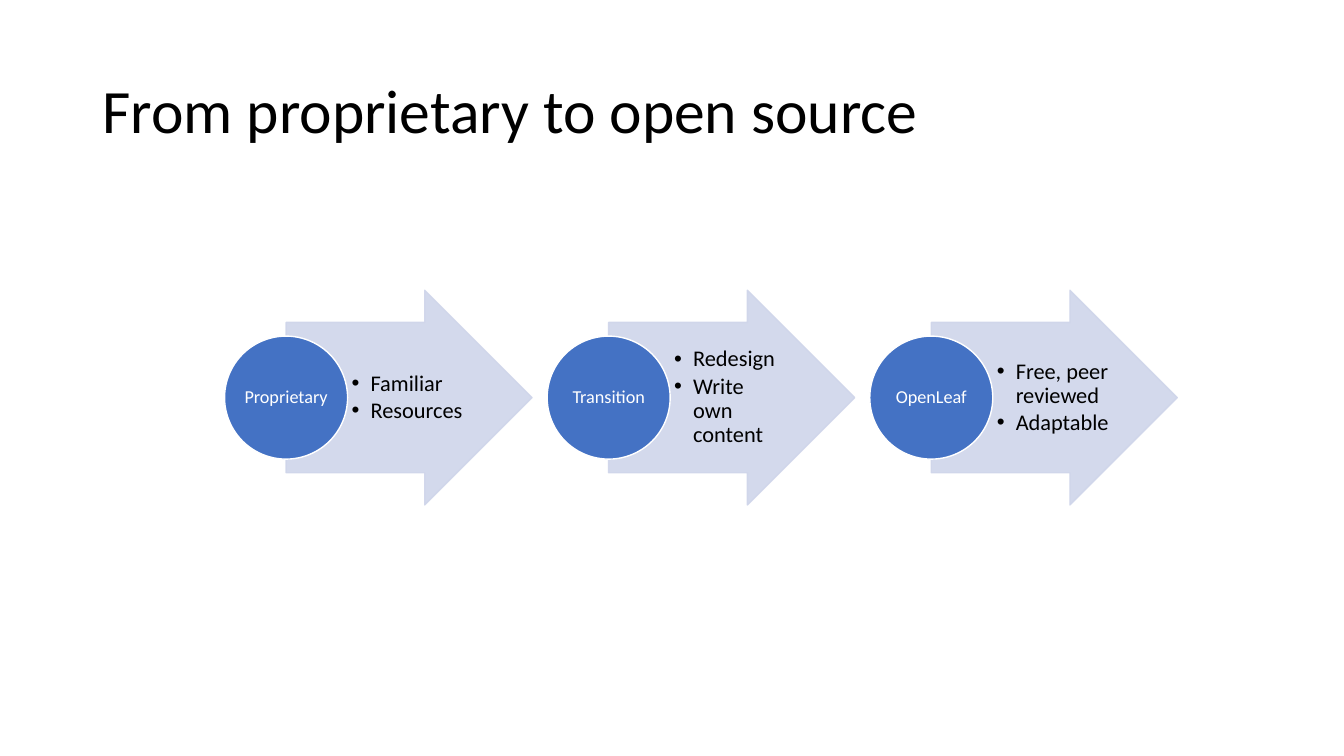
"""Build a slide with three arrow steps from proprietary to open source."""
from lxml.etree import SubElement
from pptx import Presentation
from pptx.dml.color import RGBColor
from pptx.enum.shapes import MSO_SHAPE
from pptx.enum.text import MSO_ANCHOR, MSO_AUTO_SIZE, PP_ALIGN
from pptx.oxml.ns import qn
from pptx.util import Cm, Pt

TITLE = "From proprietary to open source"
STEPS = [
    ("Proprietary", ["Familiar", "Resources"]),
    ("Transition", ["Redesign", "Write own content"]),
    ("OpenLeaf", ["Free, peer reviewed", "Adaptable"]),
]
COLORS = {"ink": "000000", "arrow": "CFD5EA", "disc": "4472C4", "white": "FFFFFF"}
FONT = "Calibri"

LEFT, MID, STEP = 7.21, 10.02, 8.13
WIDE, HIGH, SHAFT = 6.2, 5.41, 0.7
DISC, LABEL = 3.1, 2.18
LIST = 3.02
INDENT = 0.48


def color(name):
    return RGBColor.from_string(COLORS[name])


def write(shape, lines, size, ink="ink", align=PP_ALIGN.LEFT, inset=None,
          after=0, bullet=False):
    frame = shape.text_frame
    frame.word_wrap = True
    frame.auto_size = MSO_AUTO_SIZE.NONE
    frame.vertical_anchor = MSO_ANCHOR.MIDDLE
    if inset:
        (frame.margin_left, frame.margin_top,
         frame.margin_right, frame.margin_bottom) = map(Cm, inset)
    frame.text = "\n".join(lines)
    for para in frame.paragraphs:
        para.alignment = align
        para.line_spacing = 0.9
        para.space_after = Pt(after)
        font = para.runs[0].font
        font.name, font.size = FONT, Pt(size)
        font.color.rgb = color(ink)
        if bullet:
            props = para._p.get_or_add_pPr()
            props.set("marL", str(Cm(INDENT)))
            props.set("indent", str(-Cm(INDENT)))
            SubElement(props, qn("a:buFont"), typeface="Arial")
            SubElement(props, qn("a:buChar"), char="•")


def draw(slide, kind, x, y, w, h, fill, line, alpha=None):
    shape = slide.shapes.add_shape(kind, Cm(x), Cm(y), Cm(w), Cm(h))
    shape.shadow.inherit = False
    shape.fill.solid()
    shape.fill.fore_color.rgb = color(fill)
    shape.line.color.rgb = color(line)
    shape.line.width = Pt(1)
    if alpha:
        for tint in shape._element.spPr.iter(qn("a:srgbClr")):
            SubElement(tint, qn("a:alpha"), val=str(alpha * 1000))
    return shape


def box(slide, x, y, w, h):
    return slide.shapes.add_textbox(Cm(x), Cm(y), Cm(w), Cm(h))


def main():
    deck = Presentation()
    deck.slide_width, deck.slide_height = Cm(33.87), Cm(19.05)
    slide = deck.slides.add_slide(deck.slide_layouts[5])

    title = slide.shapes.title
    title.left, title.top = Cm(2.33), Cm(1.02)
    title.width, title.height = Cm(29.21), Cm(3.68)
    write(title, [TITLE], 44)

    for i, (name, points) in enumerate(STEPS):
        x = LEFT + i * STEP
        arrow = draw(slide, MSO_SHAPE.RIGHT_ARROW, x, MID - HIGH / 2, WIDE, HIGH,
                     "arrow", "arrow", alpha=90)
        arrow.adjustments[0], arrow.adjustments[1] = SHAFT, 0.5

        tall = HIGH * SHAFT
        notes = box(slide, x + DISC / 2, MID - tall / 2, LIST, tall)
        write(notes, points, 16, inset=(0.1, 0.03, 0.05, 0.03), after=2.4, bullet=True)

        draw(slide, MSO_SHAPE.OVAL, x - DISC / 2, MID - DISC / 2, DISC, DISC,
             "disc", "white")
        label = box(slide, x - LABEL / 2, MID - LABEL / 2, LABEL, LABEL)
        write(label, [name], 13, ink="white", align=PP_ALIGN.CENTER,
              inset=(0.03,) * 4, after=4.55)

    deck.save("out.pptx")


if __name__ == "__main__":
    main()
